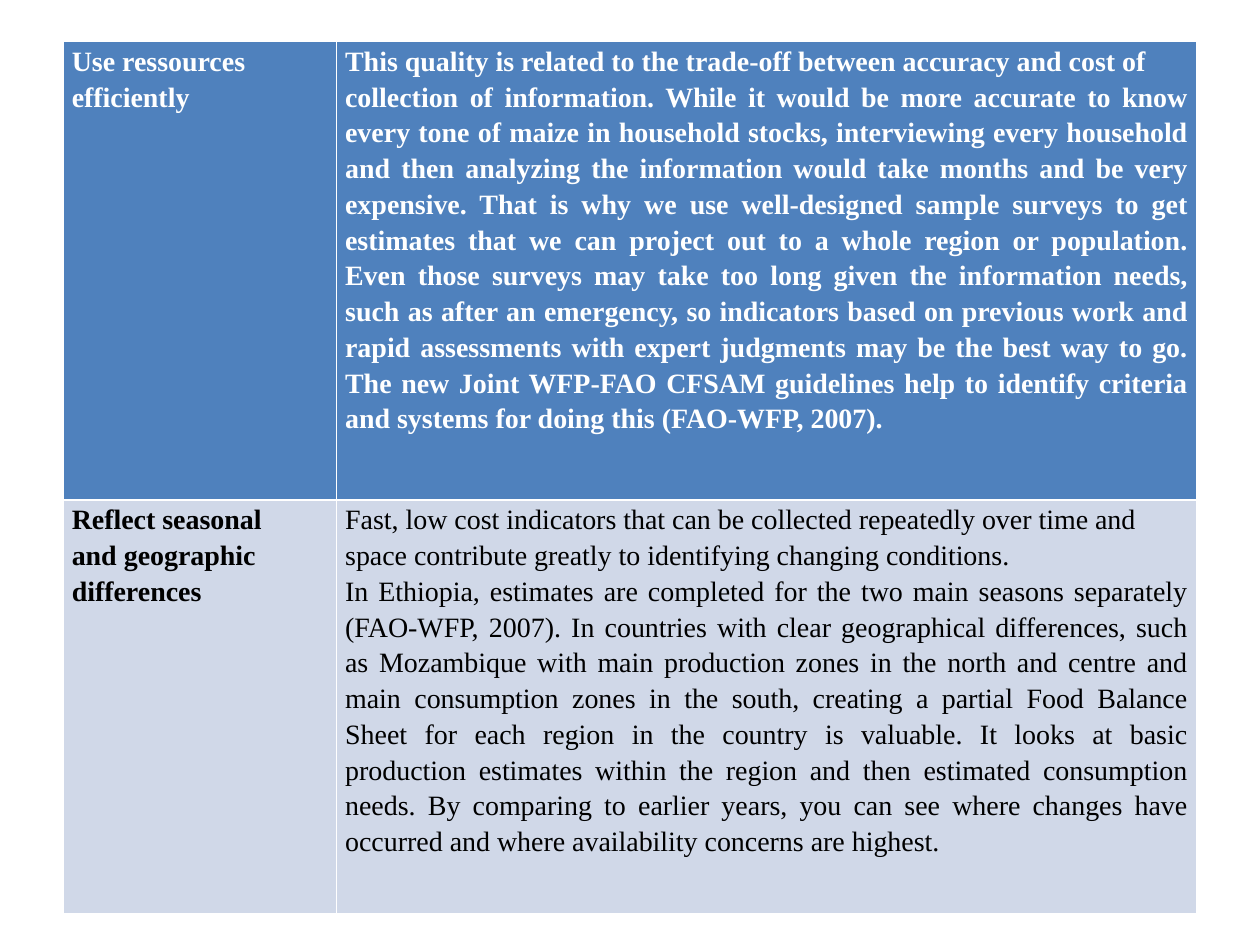
from pptx import Presentation
from pptx.dml.color import RGBColor
from pptx.enum.text import PP_ALIGN
from pptx.util import Inches, Pt

BLUE = RGBColor(0x4F, 0x81, 0xBD)
PALE = RGBColor(0xD0, 0xD8, 0xE8)
WHITE = RGBColor(0xFF, 0xFF, 0xFF)
BLACK = RGBColor(0, 0, 0)

QUALITIES = [
    (
        ["Use ressources", "efficiently"],
        [
            "This quality is related to the trade-off between accuracy and cost of",
            "collection of information. While it would be more accurate to know "
            "every tone of maize in household stocks, interviewing every household "
            "and then analyzing the information would take months and be very "
            "expensive. That is why we use well-designed sample surveys to get "
            "estimates that we can project out to a whole region or population. "
            "Even those surveys may take too long given the information needs, "
            "such as after an emergency, so indicators based on previous work and "
            "rapid assessments with expert judgments may be the best way to go. "
            "The new Joint WFP-FAO CFSAM guidelines help to identify criteria "
            "and systems for doing this (FAO-WFP, 2007).",
        ],
    ),
    (
        ["Reflect seasonal", "and geographic", "differences"],
        [
            "Fast, low cost indicators that can be collected repeatedly over time and",
            "space contribute greatly to identifying changing conditions.",
            "In Ethiopia, estimates are completed for the two main seasons separately "
            "(FAO-WFP, 2007). In countries with clear geographical differences, such "
            "as Mozambique with main production zones in the north and centre and "
            "main consumption zones in the south, creating a partial Food Balance "
            "Sheet for each region in the country is valuable. It looks at basic "
            "production estimates within the region and then estimated consumption "
            "needs. By comparing to earlier years, you can see where changes have "
            "occurred and where availability concerns are highest.",
        ],
    ),
]
ROW_STYLES = [(BLUE, WHITE), (PALE, BLACK)]

prs = Presentation()
prs.slide_width, prs.slide_height = Inches(10), Inches(7.5)
s = prs.slides.add_slide(prs.slide_layouts[6])

table = s.shapes.add_table(
    2, 2, Inches(0.5), Inches(0.33), Inches(9), Inches(6.92)
).table
for column, width in zip(table.columns, (2.17, 6.83)):
    column.width = Inches(width)
for row, height in zip(table.rows, (3.64, 3.28)):
    row.height = Inches(height)

for r, (texts, (fill, color)) in enumerate(zip(QUALITIES, ROW_STYLES)):
    for c, paragraphs in enumerate(texts):
        cell = table.cell(r, c)
        cell.fill.solid()
        cell.fill.fore_color.rgb = fill
        cell.margin_left = cell.margin_right = Inches(0.07)
        cell.margin_top = cell.margin_bottom = Inches(0)
        tf = cell.text_frame
        tf.text = "\n".join(paragraphs)
        for p in tf.paragraphs:
            p.alignment = PP_ALIGN.JUSTIFY
            p.line_spacing = 1.15
            p.font.name = "Times New Roman"
            p.font.size = Pt(16)
            p.font.bold = r == 0 or c == 0
            p.font.color.rgb = color

prs.save("out.pptx")
